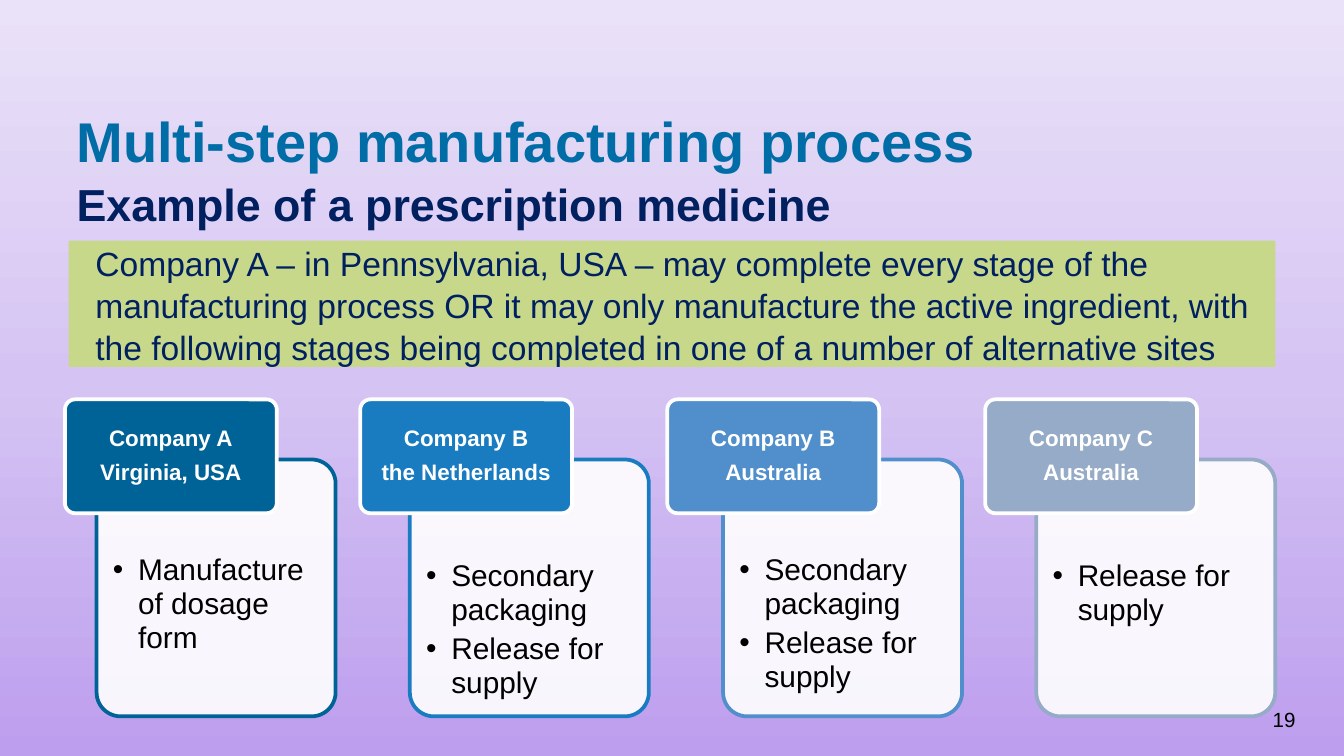
from copy import deepcopy
from dataclasses import dataclass

from pptx import Presentation
from pptx.dml.color import RGBColor
from pptx.enum.shapes import MSO_SHAPE
from pptx.enum.text import MSO_ANCHOR, PP_ALIGN
from pptx.oxml.ns import qn
from pptx.util import Pt
from lxml import etree

RECT = MSO_SHAPE.RECTANGLE
ROUND = MSO_SHAPE.ROUNDED_RECTANGLE
TOP, MID = MSO_ANCHOR.TOP, MSO_ANCHOR.MIDDLE
LEFT, CENTER, RIGHT = PP_ALIGN.LEFT, PP_ALIGN.CENTER, PP_ALIGN.RIGHT


@dataclass(frozen=True)
class Theme:
    font: str = "Arial"
    title: str = "006DA7"
    navy: str = "002060"
    green: str = "C8D88B"
    white: str = "FFFFFF"
    black: str = "000000"
    fade: tuple = ((0, "BD9EEE"), (0.5, "D5C4F3"), (1, "EAE2F8"))
    head: int = 30
    sub: int = 24
    lead: int = 18
    body: int = 16
    label: int = 12
    page: int = 11


THEME = Theme()
STAGES = (
    (34.8, "006398", ("Company A", "Virginia, USA"),
     ("Manufacture of dosage form",), 46.5),
    (193, "197BC0", ("Company B", "the Netherlands"),
     ("Secondary packaging", "Release for supply"), 49.7),
    (357.5, "508FCB", ("Company B", "Australia"),
     ("Secondary packaging", "Release for supply"), 46.5),
    (527.8, "95ABC7", ("Company C", "Australia"),
     ("Release for supply",), 49.7),
)


def color(code):
    return RGBColor.from_string(code)


def style(font, size, ink, bold=False):
    font.name = THEME.font
    font.size = Pt(size)
    font.bold = bold
    font.color.rgb = color(ink)


def indent(para, left, hang=0, bullet=False):
    props = para._p.get_or_add_pPr()
    props.set("marL", str(Pt(left)))
    props.set("indent", str(Pt(-hang)))
    if bullet:
        etree.SubElement(props, qn("a:buFont"), typeface=THEME.font)
        etree.SubElement(props, qn("a:buChar"), char="•")


def write(shape, lines, size, ink, bold=False, align=LEFT, anchor=TOP,
          pad=(0, 0, 0, 0), space=1.0, after=0, left=0, hang=0, bullet=False):
    frame = shape.text_frame
    frame.word_wrap = True
    frame.vertical_anchor = anchor
    (frame.margin_left, frame.margin_top,
     frame.margin_right, frame.margin_bottom) = map(Pt, pad)
    for i, line in enumerate(lines):
        para = frame.add_paragraph() if i else frame.paragraphs[0]
        para.alignment = align
        para.line_spacing = space
        para.space_before = Pt(0)
        para.space_after = Pt(after)
        if left:
            indent(para, left, hang, bullet)
        run = para.add_run()
        run.text = line
        style(run.font, size, ink, bold)
    return frame


def text(slide, lines, box, **form):
    shape = slide.shapes.add_textbox(*map(Pt, box))
    return write(shape, lines, **form)


def block(slide, kind, box, fill, line=None, curve=None):
    shape = slide.shapes.add_shape(kind, *map(Pt, box))
    shape.shadow.inherit = False
    shape.fill.solid()
    shape.fill.fore_color.rgb = color(fill)
    if line:
        shape.line.color.rgb = color(line)
        shape.line.width = Pt(2)
    else:
        shape.line.fill.background()
    if curve:
        shape.adjustments[0] = curve
    return shape


def fade(slide):
    fill = slide.background.fill
    fill.gradient()
    fill.gradient_angle = 90
    stops = next(slide.element.iter(qn("a:gsLst")))
    stops.insert(1, deepcopy(stops[0]))
    for stop, (place, code) in zip(fill.gradient_stops, THEME.fade):
        stop.position = place
        stop.color.rgb = color(code)


def header(slide):
    frame = text(slide, ["Multi-step manufacturing process"],
                 (41, 55.5, 652, 42.5), size=THEME.head, ink=THEME.title,
                 bold=True, space=1.05)
    para = frame.paragraphs[0]
    para.add_line_break()
    run = para.add_run()
    run.text = "Example of a prescription medicine"
    style(run.font, THEME.sub, THEME.navy, True)


def banner(slide):
    shape = block(slide, RECT, (36.7, 128.9, 646.6, 67.7), THEME.green)
    write(shape, ["Company A – in Pennsylvania, USA – may complete every stage "
                  "of the manufacturing process OR it may only manufacture the "
                  "active ingredient, with the following stages being completed "
                  "in one of a number of alternative sites"],
          THEME.lead, THEME.navy, space=1.05, left=14.4)


def card(slide, x, tone, items, drop):
    shape = block(slide, ROUND, (x, 246.2, 128, 137.6), THEME.white, tone, 0.1)
    fill = next(shape._element.spPr.iter(qn("a:srgbClr")))
    etree.SubElement(fill, qn("a:alpha"), val="90000")
    write(shape, items, THEME.body, THEME.black, pad=(5, drop, 5, 5),
          space=0.95, after=2.4, left=13.5, hang=13.5, bullet=True)


def tab(slide, x, tone, lines):
    shape = block(slide, ROUND, (x, 214, 113.5, 61), tone, THEME.white, 0.09)
    write(shape, lines, THEME.label, THEME.white, bold=True, align=CENTER,
          anchor=MID, pad=(3, 2, 3, 2), space=0.9, after=4.8)


def main():
    deck = Presentation()
    deck.slide_width, deck.slide_height = Pt(720), Pt(405)
    slide = deck.slides.add_slide(deck.slide_layouts[6])
    fade(slide)
    header(slide)
    text(slide, ["19"], (518.4, 378, 175.7, 21.6), size=THEME.page,
         ink=THEME.black, align=RIGHT, space=1.05)
    banner(slide)
    for i, (x, tone, names, items, drop) in enumerate(STAGES):
        card(slide, 51.8 + 167.8 * i, tone, items, drop)
        tab(slide, x, tone, names)
    deck.save("out.pptx")


if __name__ == "__main__":
    main()
